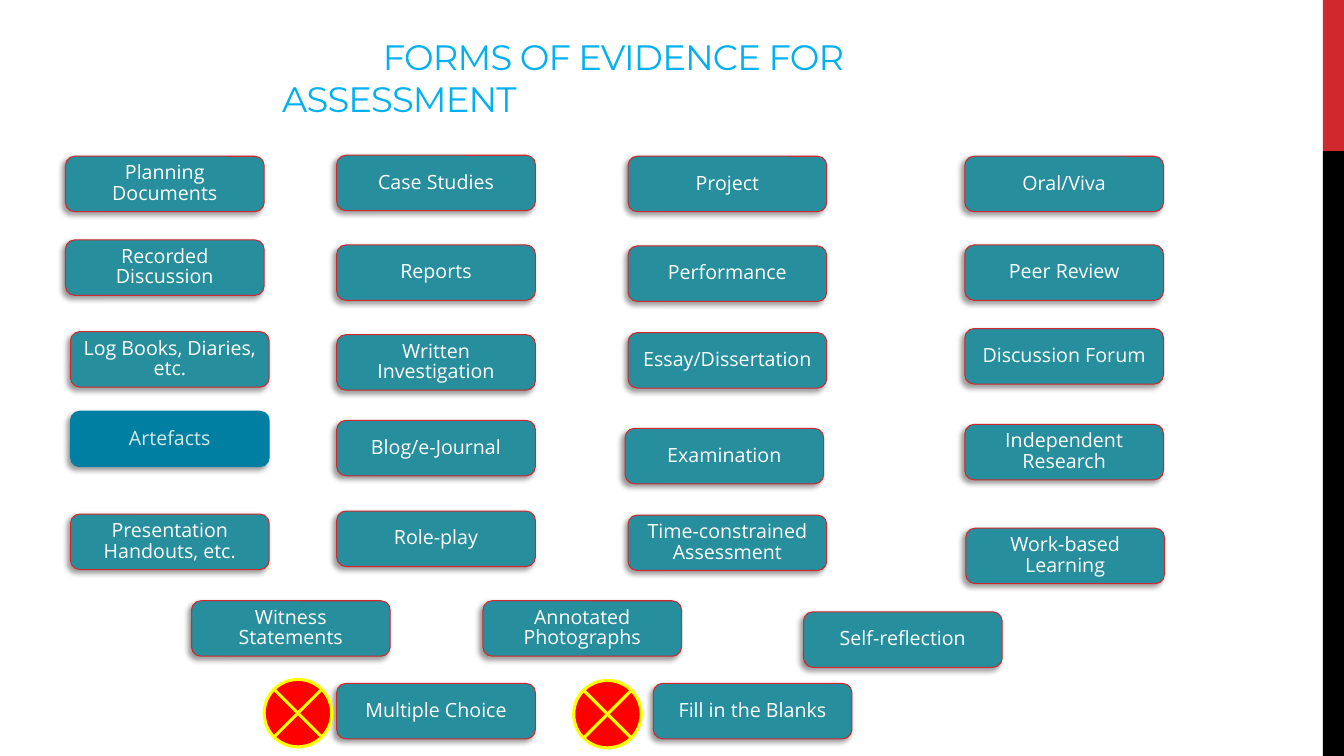
from dataclasses import dataclass

from lxml import etree
from pptx import Presentation
from pptx import util as u
from pptx.dml.color import RGBColor
from pptx.enum import shapes, text
from pptx.oxml import ns


@dataclass(frozen=True)
class Theme:
    teal: str = "268E9C"
    blue: str = "007FA3"
    mint: str = "D4EAE4"
    red: str = "D1282E"
    black: str = "000000"
    white: str = "FFFFFF"
    sky: str = "00B0F0"
    cross_fill: str = "FF0000"
    cross_line: str = "FFFF00"
    title_font: str = "Montserrat"
    card_font: str = "Open Sans"
    title_size: float = 25.2
    card_size: float = 14


@dataclass(frozen=True)
class Card:
    label: str
    top: float
    nudge: float = 0  # shift from the column's left edge
    highlighted: bool = False


@dataclass(frozen=True)
class Column:
    left: float
    cards: tuple[Card, ...]


@dataclass(frozen=True)
class Bar:
    top: float
    height: float
    color: str


THEME = Theme()
CARD_WIDTH, CARD_HEIGHT = 1.97, 0.55
CROSS_SIZE = 0.67

BARS = (Bar(0, 1.5, THEME.red), Bar(1.5, 6, THEME.black))
COLUMNS = (
    Column(0.65, (
        Card("Planning Documents", 1.55),
        Card("Recorded Discussion", 2.38),
        Card("Log Books, Diaries, etc.", 3.29, 0.05),
        Card("Artefacts", 4.08, 0.05, highlighted=True),
        Card("Presentation Handouts, etc.", 5.1, 0.05),
    )),
    Column(3.34, (
        Card("Case Studies", 1.54),
        Card("Reports", 2.43),
        Card("Written Investigation", 3.32),
        Card("Blog/e-Journal", 4.17),
        Card("Role-play", 5.07),
        Card("Multiple Choice", 6.78),
    )),
    Column(6.23, (
        Card("Project", 1.55),
        Card("Performance", 2.44),
        Card("Essay/Dissertation", 3.3),
        Card("Examination", 4.25, -0.03),
        Card("Time-constrained Assessment", 5.11),
        Card("Fill in the Blanks", 6.78, 0.25),
    )),
    Column(9.57, (
        Card("Oral/Viva", 1.55),
        Card("Peer Review", 2.43),
        Card("Discussion Forum", 3.26),
        Card("Independent Research", 4.21),
        Card("Work-based Learning", 5.24, 0.01),
    )),
    # Cards placed between the main columns
    Column(1.9, (Card("Witness Statements", 5.96),)),
    Column(4.79, (Card("Annotated Photographs", 5.96),)),
    Column(7.97, (Card("Self-reflection", 6.07),)),
)
CROSSES = ((2.62, 6.74), (5.69, 6.75))


def rgb(color: str) -> RGBColor:
    return RGBColor.from_string(color)


def add_figure(page, kind, left: float, top: float, width: float, height: float,
               fill: str, line: str | None = None, line_width: float = 0.75):
    figure = page.shapes.add_shape(
        kind, u.Inches(left), u.Inches(top), u.Inches(width), u.Inches(height))
    figure.shadow.inherit = False
    figure.fill.solid()
    figure.fill.fore_color.rgb = rgb(fill)
    if line is None:
        figure.line.fill.background()
    else:
        figure.line.color.rgb = rgb(line)
        figure.line.width = u.Pt(line_width)
    return figure


def style_text(para, font: str, size: float, color: str) -> None:
    for span in para.runs:
        span.font.name = font
        span.font.size = u.Pt(size)
        span.font.color.rgb = rgb(color)


def add_shadow(figure) -> None:
    effects = figure._element.spPr.find(ns.qn("a:effectLst"))
    shadow = etree.SubElement(
        effects, ns.qn("a:outerShdw"), blurRad=str(u.Pt(4)), dist=str(u.Pt(3)),
        dir=str(135 * 60000), algn="tr", rotWithShape="0")
    color = etree.SubElement(shadow, ns.qn("a:srgbClr"), val=THEME.black)
    etree.SubElement(color, ns.qn("a:alpha"), val="40000")


def add_title(page) -> None:
    box = page.shapes.add_textbox(
        u.Inches(0.7), u.Inches(0.45), u.Inches(8.68), u.Inches(0.79))
    frame = box.text_frame
    frame.word_wrap = True
    frame.vertical_anchor = text.MSO_ANCHOR.BOTTOM
    frame.text = "FORMS OF EVIDENCE FOR ASSESSMENT"
    para = frame.paragraphs[0]
    style_text(para, THEME.title_font, THEME.title_size, THEME.sky)
    # The first line starts one inch further in than the second
    properties = para._p.get_or_add_pPr()
    properties.set("marL", str(u.Inches(2)))
    properties.set("indent", str(u.Inches(1)))
    para.runs[0].font._element.set("spc", "-60")


def add_card(page, column: Column, card: Card) -> None:
    fill, line, color = (
        (THEME.blue, THEME.blue, THEME.mint) if card.highlighted
        else (THEME.teal, THEME.red, THEME.white))
    box = add_figure(page, shapes.MSO_SHAPE.ROUNDED_RECTANGLE,
                     column.left + card.nudge, card.top,
                     CARD_WIDTH, CARD_HEIGHT, fill, line)
    add_shadow(box)
    frame = box.text_frame
    frame.word_wrap = True
    frame.vertical_anchor = text.MSO_ANCHOR.MIDDLE
    frame.text = card.label
    para = frame.paragraphs[0]
    para.alignment = text.PP_ALIGN.CENTER
    para.line_spacing = 0.87
    style_text(para, THEME.card_font, THEME.card_size, color)


def main() -> None:
    deck = Presentation()
    deck.slide_width, deck.slide_height = u.Inches(13.33), u.Inches(7.5)
    page = deck.slides.add_slide(deck.slide_layouts[6])

    # Right-hand edge bars
    for bar in BARS:
        add_figure(page, shapes.MSO_SHAPE.RECTANGLE,
                   13.12, bar.top, 0.21, bar.height, bar.color)

    add_title(page)

    # Evidence cards
    for column in COLUMNS:
        for card in column.cards:
            add_card(page, column, card)

    # Crosses beside the excluded forms
    for left, top in CROSSES:
        add_figure(page, shapes.MSO_SHAPE.FLOWCHART_SUMMING_JUNCTION,
                   left, top, CROSS_SIZE, CROSS_SIZE,
                   THEME.cross_fill, THEME.cross_line, 2.25)

    deck.save("out.pptx")


if __name__ == "__main__":
    main()
